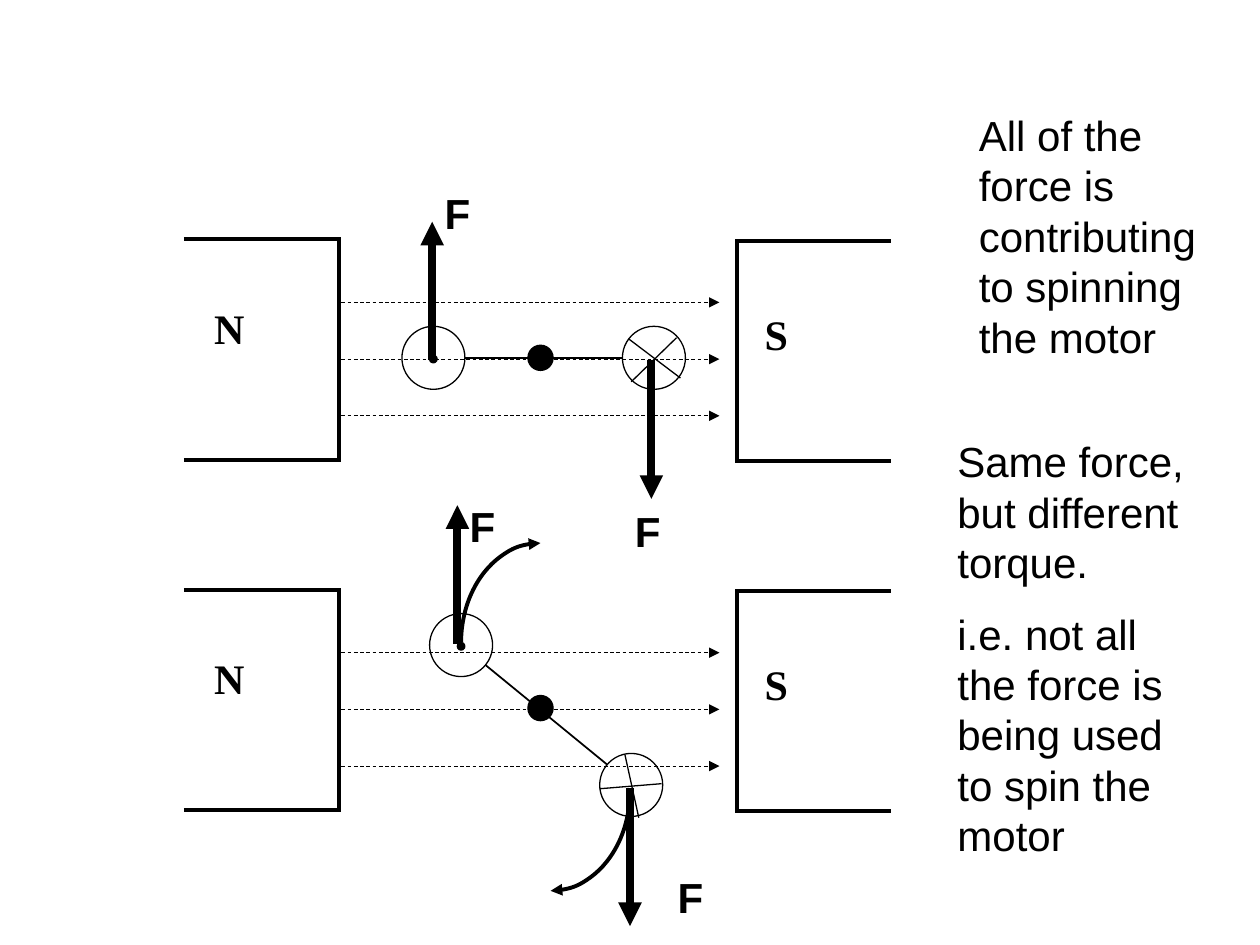
from lxml import etree
from pptx import Presentation
from pptx.dml.color import RGBColor
from pptx.enum import dml, shapes
from pptx.oxml.ns import qn
from pptx.util import Inches, Pt

COLORS = {"ink": "000000", "paper": "FFFFFF"}
LOWER = 2.78  # distance from the upper diagram down to the lower one


def color(name):
    return RGBColor.from_string(COLORS[name])


def style_line(shape, width, arrow=False):
    shape.line.color.rgb = color("ink")
    shape.line.width = Pt(width)
    if arrow:
        tail = etree.SubElement(shape.line._get_or_add_ln(), qn("a:tailEnd"))
        tail.set("type", "triangle")


def add_line(page, start, end, width, arrow=False, dashed=False):
    points = [Inches(value) for value in (*start, *end)]
    line = page.shapes.add_connector(shapes.MSO_CONNECTOR.STRAIGHT, *points)
    if dashed:
        line.line.dash_style = dml.MSO_LINE.DASH
    style_line(line, width, arrow)
    etree.SubElement(line._element.spPr, qn("a:effectLst"))


def add_circle(page, center, size, fill="ink"):
    x, y = center
    circle = page.shapes.add_shape(
        shapes.MSO_SHAPE.OVAL, Inches(x - size / 2), Inches(y - size / 2),
        Inches(size), Inches(size))
    circle.shadow.inherit = False
    circle.fill.solid()
    circle.fill.fore_color.rgb = color(fill)
    style_line(circle, 0.75)


def add_turn(page, center, start, end):
    """Draw a curved arrow around center, between two angles in degrees."""
    x, y = center
    radius_x, radius_y = 0.63, 0.79
    arc = page.shapes.add_shape(
        shapes.MSO_SHAPE.ARC, Inches(x - radius_x), Inches(y - radius_y),
        Inches(2 * radius_x), Inches(2 * radius_y))
    arc.adjustments[0] = start * 0.6  # 60000 units a degree, over 100000
    arc.adjustments[1] = end * 0.6
    arc.shadow.inherit = False
    arc.fill.background()
    style_line(arc, 2.25, arrow=True)


def add_text(page, left, top, width, height, paragraphs, font="Arial", bold=False):
    box = page.shapes.add_textbox(
        Inches(left), Inches(top), Inches(width), Inches(height))
    frame = box.text_frame
    frame.word_wrap = True
    for index, words in enumerate(paragraphs):
        para = frame.add_paragraph() if index else frame.paragraphs[0]
        para.text = words
        para.font.name = font
        para.font.size = Pt(24)
        para.font.bold = bold
        para.font.color.rgb = color("ink")
        if index:
            para.space_before = Pt(12)


def add_magnet(page, pole, open_x, face_x, top, label_at):
    """Draw a magnet as three lines, open on the side away from the coil."""
    bottom = top + 1.75
    overlap = 0.02 if face_x > open_x else -0.02
    for y in (top, bottom):
        add_line(page, (open_x, y), (face_x + overlap, y), 2.25)
    add_line(page, (face_x, top), (face_x, bottom), 2.25)
    add_text(page, *label_at, 1.25, 1, [pole], "Times New Roman", bold=True)


def add_magnets(page, shift):
    add_magnet(page, "N", 1.46, 2.69, 1.9 + shift, (1.6, 2.35 + shift))
    add_magnet(page, "S", 7.07, 5.85, 1.91 + shift, (5.97, 2.4 + shift))


def add_coil(page, pivot_y, rod, wire_out, wire_in, cross):
    """Draw the pivot, the rod and the wires running out of and into the page."""
    add_circle(page, (4.29, pivot_y), 0.2)
    add_line(page, *rod, 1)
    for center in (wire_out, wire_in):
        add_circle(page, center, 0.5, "paper")
    for stroke in cross:
        add_line(page, *stroke, 0.75)
    add_circle(page, (wire_out[0], wire_out[1] + 0.01), 0.06)


def add_field(page, shift):
    for row in range(3):
        y = 2.4 + 0.45 * row + shift
        add_line(page, (2.71, y), (5.71, y), 0.5, arrow=True, dashed=True)


def add_force(page, start, rise, label_at):
    x, y = start
    add_line(page, start, (x, y + rise), 4.5, arrow=True)
    add_text(page, *label_at, 0.63, 0.4, ["F"], bold=True)


def main():
    deck = Presentation()
    deck.slide_width, deck.slide_height = Inches(10), Inches(7.5)
    page = deck.slides.add_slide(deck.slide_layouts[6])

    add_magnets(page, LOWER)
    add_coil(page, 2.84 + LOWER, ((3.66, 5.12), (4.87, 6.11)),
             (3.66, 5.12), (5.01, 6.23),
             [((5.25, 6.22), (4.76, 6.26)), ((4.96, 5.99), (5.07, 6.49))])
    add_field(page, LOWER)

    add_magnets(page, 0)
    add_coil(page, 2.84, ((3.44, 2.84), (5, 2.84)),
             (3.44, 2.84), (5.19, 2.84),
             [((5.37, 2.68), (5.01, 3.03)), ((4.99, 2.69), (5.4, 3))])
    add_field(page, 0)

    add_force(page, (3.43, 2.86), -1.1, (3.43, 1.44))
    add_force(page, (5.17, 2.86), 1.1, (4.94, 3.96))
    add_force(page, (3.63, 5.11), -1.1, (3.63, 3.92))
    add_force(page, (5, 6.25), 1.1, (5.28, 6.87))

    add_text(page, 7.67, 0.82, 2.05, 1.3,
             ["All of the force is contributing to spinning the motor"])
    add_text(page, 7.5, 3.41, 2.05, 2.05,
             ["Same force, but different torque.",
              "i.e. not all the force is being used to spin the motor"])

    add_turn(page, (4.37, 6.28), 0, 90)
    add_turn(page, (4.29, 5.1), 180, 270)
    deck.save("out.pptx")


if __name__ == "__main__":
    main()
